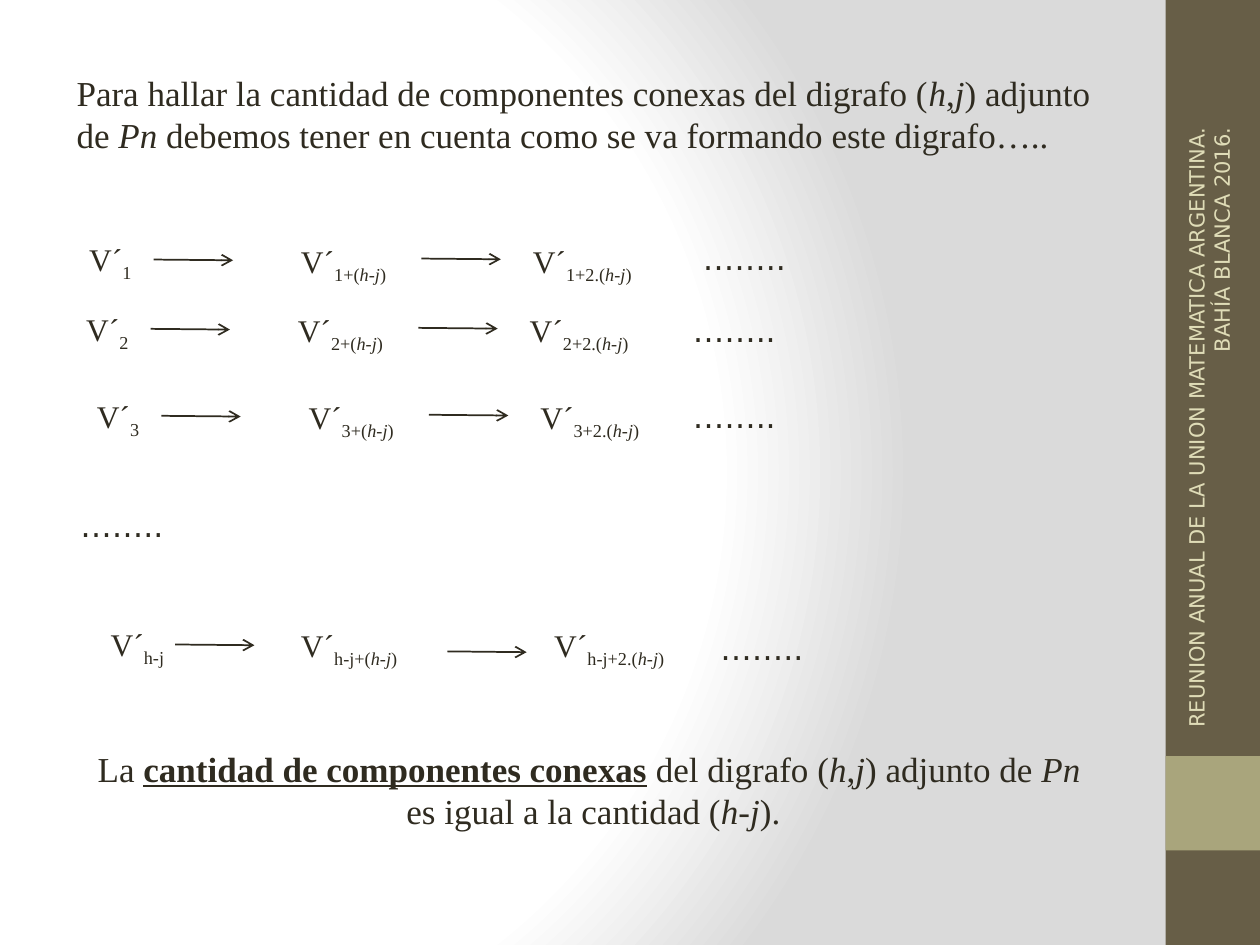
import dataclasses

import pptx
import pptx.dml.color
import pptx.enum.shapes
import pptx.enum.text
import pptx.oxml
import pptx.oxml.ns
import pptx.util


@dataclasses.dataclass(frozen=True)
class Theme:
    ink: str = "2F2B20"
    bar: str = "675E47"
    block: str = "A9A57C"
    foot: str = "DFDCB7"
    light: str = "FFFFFF"
    shade: str = "DADADA"
    serif: str = "Times New Roman"
    sans: str = "DejaVu Sans"
    body: int = 20
    node: int = 18
    small: int = 12


THEME = Theme()
COLS, ROWS = 100, 75
WIDE, HIGH = pptx.util.Inches(10), pptx.util.Inches(7.5)
ALIGN = pptx.enum.text.PP_ALIGN
STYLES = {"i": {"italic": True}, "b": {"bold": True}, "u": {"underline": True}}
TAIL = [("h", "i"), ("-", ""), ("j", "i")]
PAIR = [("h", "i"), (",", ""), ("j", "i")]
DOTS = [[("……..", "")]]
SHIFTS = (("1", 18.6, 0, 54.8, 18.5), ("2", 24.1, -0.25, 54, 24.2), ("3", 31, 0.6, 54, 31))


def col(n):
    return round(WIDE * n / COLS)


def row(n):
    return round(HIGH * n / ROWS)


def rgb(code):
    return pptx.dml.color.RGBColor.from_string(code)


def apply(item, values):
    for name, value in values.items():
        setattr(item, name, value)


def add_back(slide):
    stops = ((0, THEME.light), (75, THEME.light), (100, THEME.shade))
    marks = "".join(
        f'<a:gs pos="{at * 1000}"><a:srgbClr val="{code}"/></a:gs>' for at, code in stops
    )
    fill = slide.background.fill
    fill.gradient()
    grad = slide.background._cSld.bg.bgPr[0]
    new = pptx.oxml.parse_xml(
        f'<a:gradFill {pptx.oxml.ns.nsdecls("a")} rotWithShape="1"><a:gsLst>{marks}</a:gsLst>'
        '<a:path path="circle"><a:fillToRect l="20000" t="50000" r="100000" b="50000"/>'
        "</a:path></a:gradFill>"
    )
    grad.getparent().replace(grad, new)


def add_block(slide, top, high, code):
    kind = pptx.enum.shapes.MSO_SHAPE.RECTANGLE
    shape = slide.shapes.add_shape(kind, col(92.5), row(top), col(7.5), row(high))
    shape.shadow.inherit = False
    shape.fill.solid()
    shape.fill.fore_color.rgb = rgb(code)
    shape.line.fill.background()


def add_text(slide, at, paras, size, face=THEME.serif, code=THEME.ink, align=ALIGN.LEFT, gap=0):
    left, top, wide, high = at
    box = slide.shapes.add_textbox(col(left), row(top), col(wide), row(high))
    frame = box.text_frame
    apply(frame, {"word_wrap": True, "auto_size": pptx.enum.text.MSO_AUTO_SIZE.SHAPE_TO_FIT_TEXT})
    for index, runs in enumerate(paras):
        para = frame.add_paragraph() if index else frame.paragraphs[0]
        para.alignment = align
        if gap:
            space = pptx.oxml.parse_xml(
                f'<a:spcBef {pptx.oxml.ns.nsdecls("a")}><a:spcPct val="{gap * 1000}"/></a:spcBef>'
            )
            para._p.get_or_add_pPr().append(space)
        for text, marks in runs:
            run = para.add_run()
            run.text = text
            apply(run.font, {"name": face, "size": pptx.util.Pt(size)})
            run.font.color.rgb = rgb(code)
            for mark in marks:
                if mark == "s":
                    run._r.get_or_add_rPr().set("baseline", "-25000")
                else:
                    apply(run.font, STYLES[mark])
    return box


def add_arrow(slide, left, top):
    kind = pptx.enum.shapes.MSO_CONNECTOR.STRAIGHT
    line = slide.shapes.add_connector(kind, col(left), row(top), col(left + 6.3), row(top + 0.06))
    line.line.color.rgb = rgb(THEME.ink)
    line.line.width = pptx.util.Pt(1)
    head = pptx.oxml.parse_xml(f'<a:tailEnd {pptx.oxml.ns.nsdecls("a")} type="arrow"/>')
    line.line._get_or_add_ln().append(head)
    flat = pptx.oxml.parse_xml(f'<a:effectLst {pptx.oxml.ns.nsdecls("a")}/>')
    line._element.spPr.append(flat)


def add_dots(slide, left, top):
    add_text(slide, (left, top, 10, 4), DOTS, THEME.node, THEME.sans)


def add_node(slide, left, top, wide, label, tail):
    parts = [(label, "")] + ([*TAIL, (")", "")] if tail else [])
    runs = [("V´", "")] + [(text, marks + "s") for text, marks in parts]
    add_text(slide, (left, top, wide, 4), [runs], THEME.node, gap=50)


def add_chain(slide, name, top, nodes, arrows, dots):
    labels = (name, f"{name}+(", f"{name}+2.(")
    for index, (left, label) in enumerate(zip(nodes, labels)):
        down = 0.1 if index else 0
        add_node(slide, left, top + down, 12.9 if index else 7.4, label, index > 0)
    for left, high in arrows:
        add_arrow(slide, left, high)
    add_dots(slide, *dots)


def add_foot(slide):
    text = "REUNION ANUAL DE LA UNION MATEMATICA ARGENTINA. BAHÍA BLANCA 2016."
    box = add_text(slide, (70.9, 32.2, 50.1, 4), [[(text, "")]],
                   THEME.small, THEME.sans, THEME.foot, ALIGN.RIGHT)
    box.rotation = 270
    apply(box.text_frame, {
        "auto_size": pptx.enum.text.MSO_AUTO_SIZE.NONE,
        "vertical_anchor": pptx.enum.text.MSO_ANCHOR.MIDDLE,
    })


def main():
    deck = pptx.Presentation()
    apply(deck, {"slide_width": WIDE, "slide_height": HIGH})
    slide = deck.slides.add_slide(deck.slide_layouts[6])
    add_back(slide)
    add_block(slide, 0, ROWS, THEME.bar)
    add_block(slide, 60, 7.5, THEME.block)

    intro = [("Para hallar la cantidad de componentes conexas del digrafo (", ""), *PAIR,
             (") adjunto de ", ""), ("Pn ", "i"),
             ("debemos tener en cuenta como se va formando este digrafo…..", "")]
    add_text(slide, (5.1, 5.2, 84.3, 7.7), [intro], THEME.body)

    for name, top, shift, left, level in SHIFTS:
        nodes = [start + shift for start in (6.1, 22.9, 41.3)]
        arrows = [(12.2 + shift, top + 2), (33.45 + shift, top + 1.92)]
        add_chain(slide, name, top, nodes, arrows, (left, level))
    add_dots(slide, 5.4, 39.7)
    add_chain(slide, "h-j", 49.1, (7.8, 22.9, 43), ((13.9, 51.15), (35.5, 51.7)), (56.2, 49.4))
    slide.shapes[-6].text_frame.paragraphs[0]
    last = [("La ", ""), ("cantidad de componentes conexas", "bu"), (" ", "b"),
            ("del digrafo (", ""), *PAIR, (") adjunto de ", ""), ("Pn ", "i")]
    end = [("es igual a la cantidad (", ""), *TAIL, (").", "")]
    add_text(slide, (6.1, 58.8, 82, 7.7), [last, end], THEME.body, align=ALIGN.CENTER)
    add_foot(slide)
    deck.save("out.pptx")


if __name__ == "__main__":
    main()
